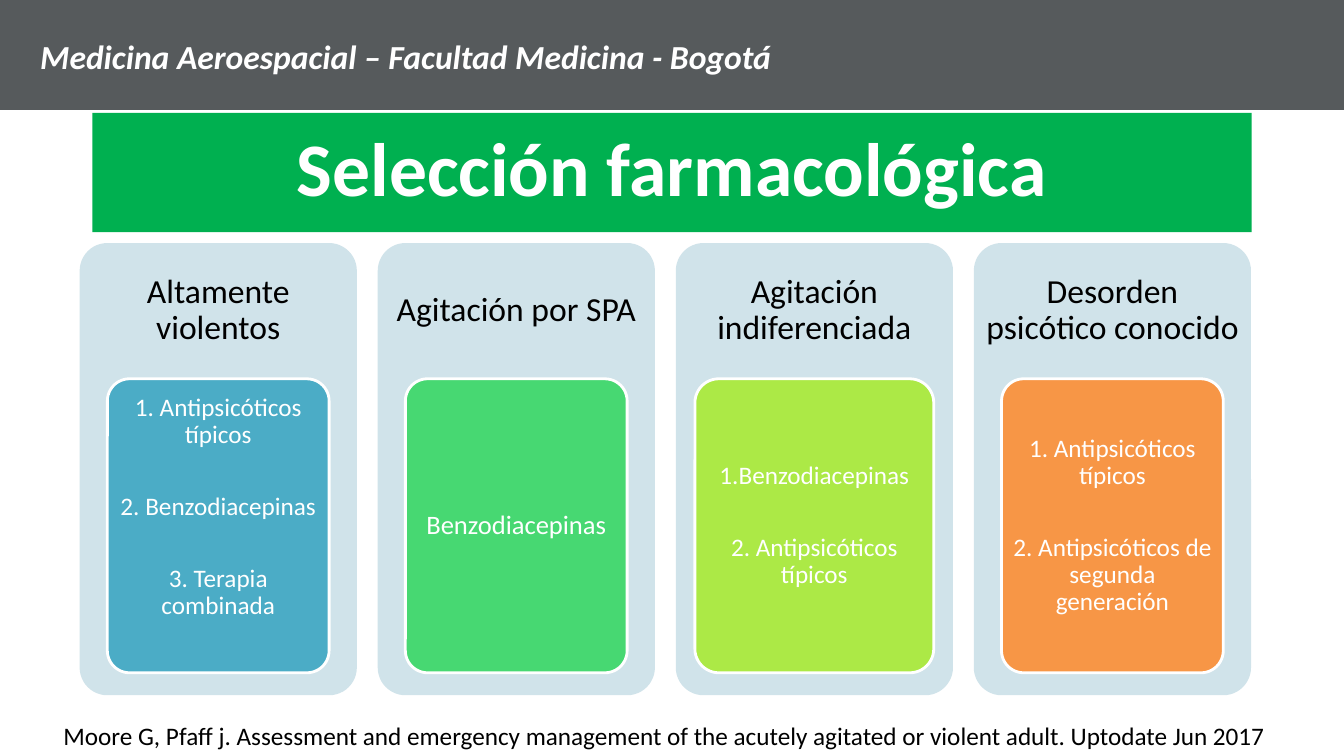
from pptx import Presentation
from pptx import util as u
from pptx.dml.color import RGBColor
from pptx.enum import shapes, text

GRAY = RGBColor(0x56, 0x5A, 0x5C)
GREEN = RGBColor(0x00, 0xB0, 0x50)
PALE_BLUE = RGBColor(0xD0, 0xE3, 0xEA)
TEAL = RGBColor(0x4B, 0xAC, 0xC6)
MINT = RGBColor(0x47, 0xD8, 0x72)
LIME = RGBColor(0xAC, 0xE9, 0x46)
ORANGE = RGBColor(0xF7, 0x96, 0x46)
WHITE = RGBColor(0xFF, 0xFF, 0xFF)
BLACK = RGBColor(0x00, 0x00, 0x00)


class Deck:
    font = "Calibri"

    def __init__(self, width, height):
        self.prs = Presentation()
        self.prs.slide_width = u.Pt(width)
        self.prs.slide_height = u.Pt(height)
        self.slide = self.prs.slides.add_slide(self.prs.slide_layouts[5])

    def set_lines(self, shape, lines, size, color, bold=False, italic=False,
                  centred=True, gap=0, insets=(7.2, 3.6, 7.2, 3.6), wrap=True):
        frame = shape.text_frame
        frame.text = "\n".join(lines)
        frame.word_wrap = wrap
        frame.auto_size = text.MSO_AUTO_SIZE.NONE
        frame.vertical_anchor = (text.MSO_ANCHOR.MIDDLE if centred
                                 else text.MSO_ANCHOR.TOP)
        (frame.margin_left, frame.margin_top,
         frame.margin_right, frame.margin_bottom) = map(u.Pt, insets)
        for index, line in enumerate(frame.paragraphs):
            line.alignment = text.PP_ALIGN.CENTER if centred else text.PP_ALIGN.LEFT
            line.line_spacing = 0.9 if centred else 1.0
            line.space_before = u.Pt(gap if index else 0)
            for run in line.runs:
                run.font.name = self.font
                run.font.size = u.Pt(size)
                run.font.bold = bold
                run.font.italic = italic
                run.font.color.rgb = color

    def title(self, wording, box, fill):
        title = self.slide.shapes.title
        title.left, title.top, title.width, title.height = map(u.Pt, box)
        title.fill.solid()
        title.fill.fore_color.rgb = fill
        self.set_lines(title, [wording], 54, WHITE, bold=True)

    def panel(self, box, fill, outline=None, rounded=True):
        kind = shapes.MSO_SHAPE.ROUNDED_RECTANGLE if rounded else shapes.MSO_SHAPE.RECTANGLE
        panel = self.slide.shapes.add_shape(kind, *map(u.Pt, box))
        panel.shadow.inherit = False
        panel.fill.solid()
        panel.fill.fore_color.rgb = fill
        if rounded:
            panel.adjustments[0] = 0.1
        if outline is None:
            panel.line.fill.background()
        else:
            panel.line.color.rgb = outline
            panel.line.width = u.Pt(2)
        return panel

    def label(self, wording, box, size, color, **style):
        label = self.slide.shapes.add_textbox(*map(u.Pt, box))
        self.set_lines(label, [wording], size, color, **style)


def main():
    deck = Deck(960, 540)
    deck.panel((0, 0, 960, 78.5), GRAY, rounded=False)
    deck.title("Selección farmacológica", (66, 80.6, 828, 85.2), GREEN)

    card_left, card_pitch, card_width = 56.9, 212.9, 198
    card_top, heading_height = 173.6, 97
    extra_bottom = 26
    cards = [
        ("Altamente violentos",
         ["1. Antipsicóticos típicos", "2. Benzodiacepinas", "3. Terapia combinada"],
         TEAL, 158.4, 18, extra_bottom),
        ("Agitación por SPA", ["Benzodiacepinas"], MINT, 158.4, 19, 0),
        ("Agitación indiferenciada",
         ["1.Benzodiacepinas", "2. Antipsicóticos típicos"], LIME, 170.6, 18, 0),
        ("Desorden psicótico conocido",
         ["1. Antipsicóticos típicos", "2. Antipsicóticos de segunda generación"],
         ORANGE, 158.4, 18, 0),
    ]
    for column, (heading, drugs, fill, width, size, lift) in enumerate(cards):
        left = card_left + column * card_pitch
        deck.panel((left, card_top, card_width, 323), PALE_BLUE)
        deck.label(heading, (left, card_top, card_width, heading_height), 24, BLACK,
                   insets=(7.2, 7.2, 7.2, 7.2))
        treatment = deck.panel((left + (card_width - width) / 2, card_top + heading_height,
                                width, 210), fill, outline=WHITE)
        deck.set_lines(treatment, drugs, size, WHITE, gap=32,
                       insets=(3.6, 2.9, 3.6, 2.9 + lift))

    deck.label("Moore G, Pfaff j. Assessment and emergency management of the acutely "
               "agitated or violent adult. Uptodate Jun 2017",
               (38.2, 511.2, 883.4, 28.8), 18, BLACK, centred=False, wrap=False)
    deck.label("Medicina Aeroespacial – Facultad Medicina - Bogotá",
               (21.6, 22.3, 540.7, 36), 24, WHITE, bold=True, italic=True,
               centred=False, wrap=False)
    deck.prs.save("out.pptx")


if __name__ == "__main__":
    main()
